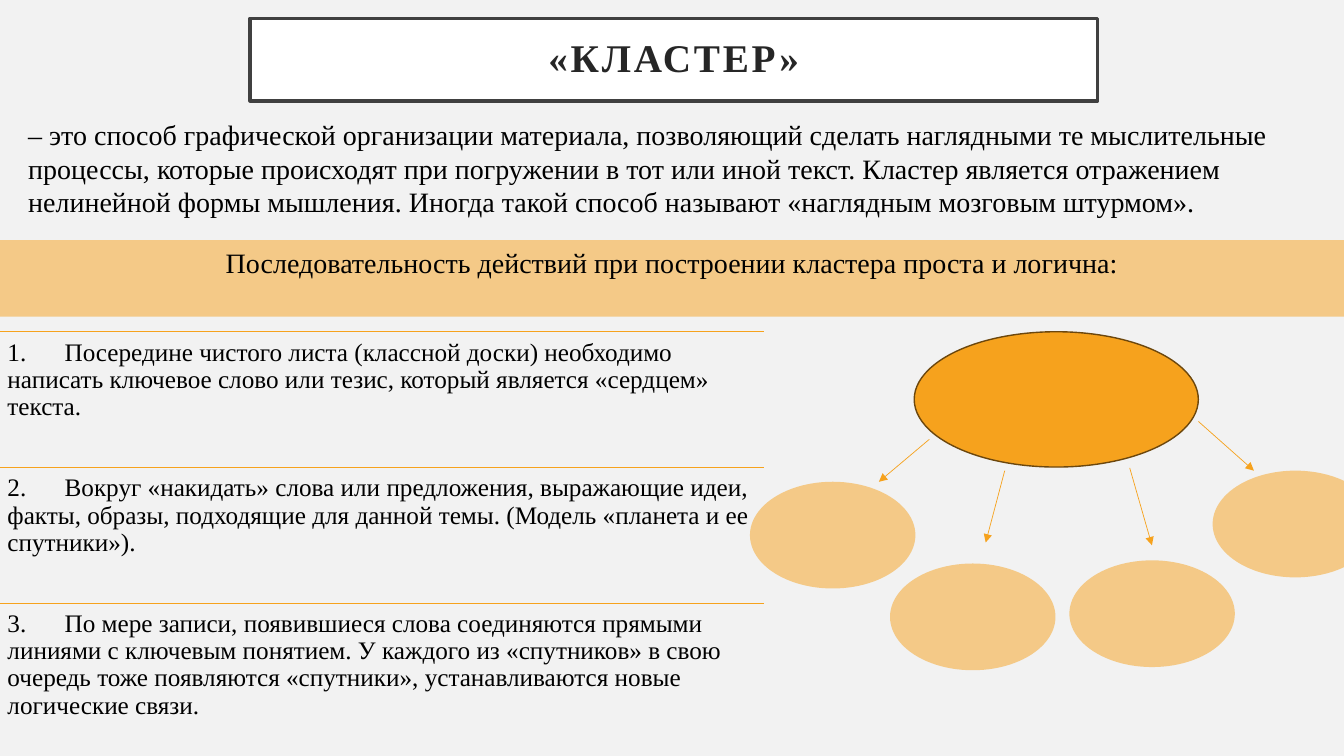
from dataclasses import dataclass

from lxml import etree
from pptx import Presentation
from pptx.dml.color import RGBColor
from pptx.enum.shapes import MSO_CONNECTOR, MSO_SHAPE
from pptx.enum.text import MSO_ANCHOR, MSO_AUTO_SIZE, PP_ALIGN
from pptx.oxml.ns import qn
from pptx.util import Cm, Pt

STRAIGHT = MSO_CONNECTOR.STRAIGHT
RECTANGLE, OVAL = MSO_SHAPE.RECTANGLE, MSO_SHAPE.OVAL
LEFT, CENTER = PP_ALIGN.LEFT, PP_ALIGN.CENTER
TOP, MIDDLE = MSO_ANCHOR.TOP, MSO_ANCHOR.MIDDLE

TITLE = "«КЛАСТЕР»"
DEFINITION = (
    "– это способ графической организации материала, позволяющий сделать "
    "наглядными те мыслительные процессы, которые происходят при погружении в "
    "тот или иной текст. Кластер является отражением нелинейной формы мышления. "
    "Иногда такой способ называют «наглядным мозговым штурмом»."
)
BAND = "Последовательность действий при построении кластера проста и логична:"
STEPS = [
    "Посередине чистого листа (классной доски) необходимо написать ключевое "
    "слово или тезис, который является «сердцем» текста.",
    "Вокруг «накидать» слова или предложения, выражающие идеи, факты, образы, "
    "подходящие для данной темы. (Модель «планета и ее спутники»).",
    "По мере записи, появившиеся слова соединяются прямыми линиями с ключевым "
    "понятием. У каждого из «спутников» в свою очередь тоже появляются "
    "«спутники», устанавливаются новые логические связи.",
]

# Cluster diagram, in centimetres: left, top of each satellite; arrow start, end
PLANET = (23.04, 8.36, 7.16, 3.41)
SATELLITE_SIZE = (4.17, 2.69)
SATELLITES = [
    ((18.9, 12.14), (23.42, 11.07), (22.15, 12.14)),
    ((22.43, 14.2), (25.32, 11.86), (24.84, 13.67)),
    ((26.95, 14.12), (28.47, 11.79), (29.03, 13.74)),
    ((30.56, 11.86), (30.2, 10.62), (31.6, 11.86)),
]

SLIDE_WIDTH, SLIDE_HEIGHT = 33.87, 19.05
STEPS_TOP, STEPS_WIDTH, STEP_HEIGHT = 8.36, 19.25, 3.42
STEP_TAB = 1.44


@dataclass(frozen=True)
class Theme:
    font: str = "Times New Roman"
    background: RGBColor = RGBColor(0xF2, 0xF2, 0xF2)
    accent: RGBColor = RGBColor(0xF6, 0xA2, 0x1D)
    planet_line: RGBColor = RGBColor(0x6C, 0x47, 0x0D)
    title_fill: RGBColor = RGBColor(0xFF, 0xFF, 0xFF)
    title_line: RGBColor = RGBColor(0x40, 0x40, 0x40)
    title_text: RGBColor = RGBColor(0x26, 0x26, 0x26)
    text: RGBColor = RGBColor(0, 0, 0)
    title_size: int = 28
    body_size: int = 20
    step_size: int = 18


THEME = Theme()


def lengths(values):
    return [Cm(value) for value in values]


def write(shape, text, size, color=THEME.text, align=LEFT, anchor=TOP,
          inset=None, spacing=None, tab=None):
    frame = shape.text_frame
    frame.text = text
    frame.word_wrap = True
    frame.auto_size = MSO_AUTO_SIZE.NONE
    frame.vertical_anchor = anchor
    if inset is not None:
        frame.margin_left = frame.margin_right = Cm(inset)
        frame.margin_top = frame.margin_bottom = Cm(inset)
    paragraph = frame.paragraphs[0]
    paragraph.alignment = align
    if spacing:
        paragraph.line_spacing = spacing
    if tab:
        tabs = etree.SubElement(paragraph._p.get_or_add_pPr(), qn("a:tabLst"))
        etree.SubElement(tabs, qn("a:tab"), pos=str(Cm(tab)), algn="l")
    paragraph.font.name = THEME.font
    paragraph.font.size = Pt(size)
    paragraph.font.color.rgb = color
    return paragraph


def add_accent_shape(slide, kind, box, opacity=100):
    shape = slide.shapes.add_shape(kind, *lengths(box))
    shape.shadow.inherit = False
    shape.fill.solid()
    shape.fill.fore_color.rgb = THEME.accent
    shape.line.fill.background()
    if opacity < 100:
        color = shape.fill._xPr.find(qn("a:solidFill"))[0]
        etree.SubElement(color, qn("a:alpha"), val=str(opacity * 1000))
    return shape


def add_line(slide, start, end, width, arrow=False):
    line = slide.shapes.add_connector(STRAIGHT, *lengths(start + end))
    line.line.color.rgb = THEME.accent
    line.line.width = Pt(width)
    if arrow:
        etree.SubElement(line.line._get_or_add_ln(), qn("a:tailEnd"), type="triangle")
    etree.SubElement(line._element.spPr, qn("a:effectLst"))


def add_title(slide):
    title = slide.shapes.title
    title.left, title.top, title.width, title.height = lengths((6.3, 0.46, 21.36, 2.08))
    title.fill.solid()
    title.fill.fore_color.rgb = THEME.title_fill
    title.line.color.rgb = THEME.title_line
    title.line.width = Pt(2.5)
    paragraph = write(title, TITLE, THEME.title_size, THEME.title_text, CENTER,
                      MIDDLE, inset=0.5, spacing=0.9)
    paragraph.font.bold = True
    paragraph.runs[0].font._element.set("spc", "200")


def add_steps(slide):
    for index, step in enumerate(STEPS):
        top = STEPS_TOP + index * STEP_HEIGHT
        add_line(slide, (0, top), (STEPS_WIDTH, top), 1)
        box = slide.shapes.add_textbox(*lengths((0, top, STEPS_WIDTH, STEP_HEIGHT)))
        write(box, f"{index + 1}.\t{step}", THEME.step_size,
              inset=0.19, spacing=0.9, tab=STEP_TAB)


def add_cluster(slide):
    planet = add_accent_shape(slide, OVAL, PLANET)
    planet.line.color.rgb = THEME.planet_line
    planet.line.width = Pt(1)
    for corner, start, end in SATELLITES:
        add_line(slide, start, end, 0.5, arrow=True)
        add_accent_shape(slide, OVAL, corner + SATELLITE_SIZE, opacity=50)


def main():
    deck = Presentation()
    deck.slide_width, deck.slide_height = lengths((SLIDE_WIDTH, SLIDE_HEIGHT))
    slide = deck.slides.add_slide(deck.slide_layouts[5])
    slide.background.fill.solid()
    slide.background.fill.fore_color.rgb = THEME.background

    add_title(slide)
    definition = slide.shapes.add_textbox(*lengths((0.46, 2.84, 33.2, 2.82)))
    write(definition, DEFINITION, THEME.body_size)
    band = add_accent_shape(slide, RECTANGLE, (0, 6.05, SLIDE_WIDTH, 1.93), opacity=50)
    write(band, BAND, THEME.body_size, align=CENTER)
    add_steps(slide)
    add_cluster(slide)
    deck.save("out.pptx")


if __name__ == "__main__":
    main()
